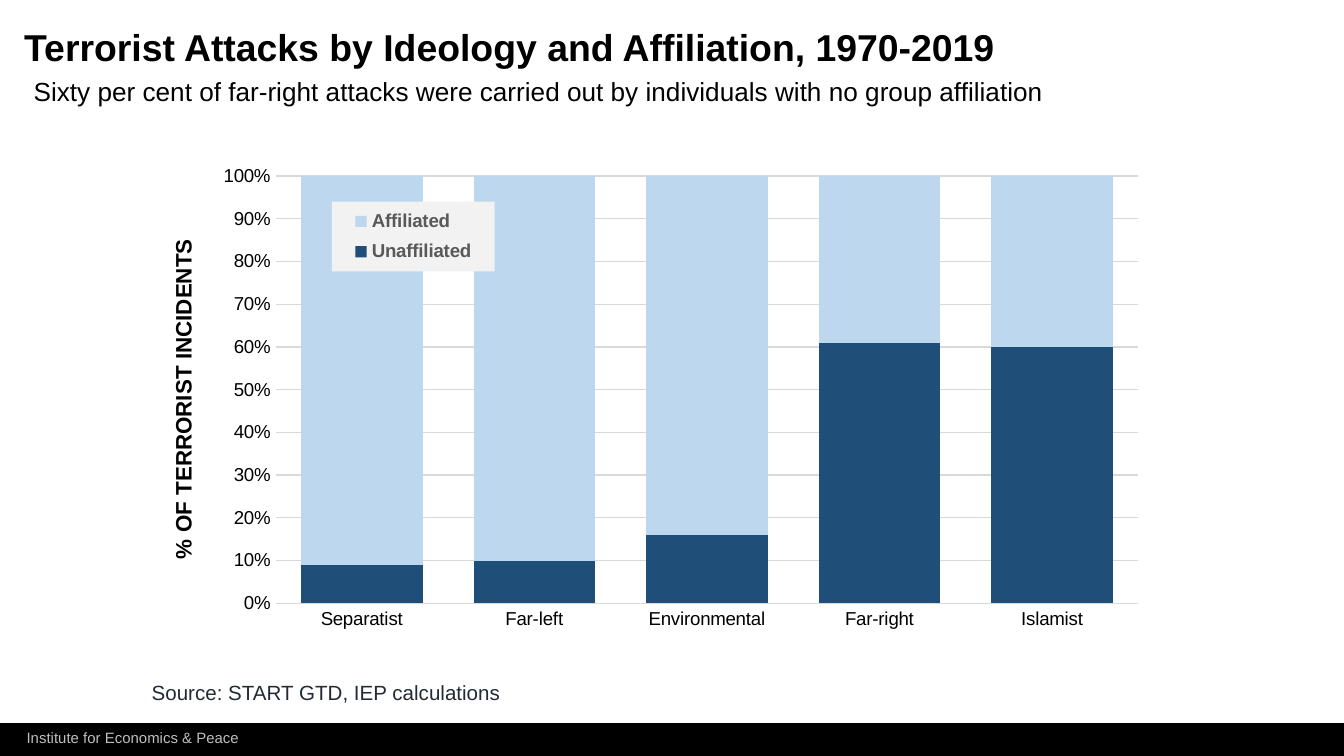
from lxml import etree
from pptx import Presentation
from pptx.chart.data import CategoryChartData
from pptx.dml.color import RGBColor
from pptx.enum.chart import XL_CHART_TYPE, XL_LEGEND_POSITION, XL_TICK_MARK
from pptx.enum.shapes import MSO_SHAPE
from pptx.enum.text import MSO_ANCHOR, PP_ALIGN
from pptx.oxml import parse_xml
from pptx.oxml.ns import nsdecls, qn
from pptx.util import Inches, Pt

STACKED = XL_CHART_TYPE.COLUMN_STACKED_100
RIGHT = XL_LEGEND_POSITION.RIGHT
NO_TICK = XL_TICK_MARK.NONE
RECT = MSO_SHAPE.RECTANGLE
TOP, MIDDLE = MSO_ANCHOR.TOP, MSO_ANCHOR.MIDDLE
LEFT = PP_ALIGN.LEFT

FONT = "Arial"
COLORS = {
    "black": "000000", "white": "FFFFFF", "navy": "1F4E79", "sky": "BDD7EE",
    "grid": "D9D9D9", "legend": "F2F2F2", "label": "595959",
    "source": "222A35", "footer": "BFBFBF",
}
GROUPS = ["Separatist", "Far-left", "Environmental", "Far-right", "Islamist"]
SERIES = [
    ("Unaffiliated", (9, 10, 16, 61, 60), "navy"),
    ("Affiliated", (91, 90, 84, 39, 40), "sky"),
]


def rgb(name):
    return RGBColor.from_string(COLORS[name])


def style(font, size, color, bold=False):
    font.name, font.size, font.bold = FONT, Pt(size), bold
    font.color.rgb = rgb(color)


def write(shape, text, size, color, insets, bold=False, anchor=TOP, wrap=True):
    frame = shape.text_frame
    frame.word_wrap = wrap
    frame.vertical_anchor = anchor
    (frame.margin_left, frame.margin_top,
     frame.margin_right, frame.margin_bottom) = map(Inches, insets)
    para = frame.paragraphs[0]
    para.text, para.alignment = text, LEFT
    style(para.font, size, color, bold)
    return para


def add_box(slide, box, fill):
    shape = slide.shapes.add_shape(RECT, *map(Inches, box))
    shape.shadow.inherit = False
    shape.fill.solid()
    shape.fill.fore_color.rgb = rgb(fill)
    shape.line.fill.background()
    return shape


def add_footer(slide, box):
    x, y, _, h = box
    add_box(slide, box, "black")
    label = slide.shapes.add_textbox(*map(Inches, (x + 0.1, y - 0.01, 1.8, h - 0.01)))
    write(label, "Institute for Economics & Peace", 8, "footer",
          (0.1, 0.05, 0.1, 0.05), wrap=False)


def add_header(slide, box):
    x, y, w, h = box
    title = slide.shapes.title
    title.left, title.top, title.width, title.height = map(Inches, (x, y, w, h / 2))
    para = write(title, "Terrorist Attacks by Ideology and Affiliation, 1970-2019",
                 20, "black", (0, 0, 0, 0), bold=True, anchor=MIDDLE)
    para.line_spacing = 0.9
    sub = slide.shapes.add_textbox(*map(Inches, (x, y + h / 2, w, h / 2)))
    write(sub, "Sixty per cent of far-right attacks were carried out by "
          "individuals with no group affiliation", 14, "black",
          (0.07, 0.04, 0.07, 0.04))


def add_source(slide, box):
    write(add_box(slide, box, "white"), "Source: START GTD, IEP calculations",
          11, "source", (0.1, 0.24, 0.1, 0))


def set_layout(part, after, box, spot, inner=False):
    """Place a chart part at a spot, in inches from the corner of the chart box."""
    for old in part.findall(qn("c:layout")):
        part.remove(old)
    layout = parse_xml(f"<c:layout {nsdecls('c')}><c:manualLayout/></c:layout>")
    vals = [("layoutTarget", "inner")] if inner else []
    vals += [("xMode", "edge"), ("yMode", "edge")]
    vals += [(tag, size / whole)
             for tag, size, whole in zip("xywh", spot, box[2:] * 2)]
    for tag, val in vals:
        etree.SubElement(layout[0], qn(f"c:{tag}")).set("val", str(val))
    prior = part.find(qn(after)) if after else None
    if prior is None:
        part.insert(0, layout)
    else:
        prior.addnext(layout)


def add_fill(part, color, before=None):
    props = parse_xml(f'<c:spPr {nsdecls("c", "a")}><a:solidFill>'
                      f'<a:srgbClr val="{COLORS[color]}"/></a:solidFill>'
                      '<a:ln><a:noFill/></a:ln></c:spPr>')
    mark = part.find(qn(before)) if before else None
    if mark is None:
        part.append(props)
    else:
        mark.addprevious(props)


def add_graph(slide, box):
    data = CategoryChartData(number_format="0")
    data.categories = GROUPS
    for name, vals, _ in SERIES:
        data.add_series(name, vals)
    chart = slide.shapes.add_chart(STACKED, *map(Inches, box), data).chart
    chart.has_title = False
    style(chart.font, 10, "black")

    # Columns
    plot = chart.plots[0]
    plot.gap_width, plot.overlap, plot.vary_by_categories = 42, 100, False
    for series, (_, _, color) in zip(plot.series, SERIES):
        series.format.fill.solid()
        series.format.fill.fore_color.rgb = rgb(color)

    # Axes
    cat, val = chart.category_axis, chart.value_axis
    for axis in (cat, val):
        axis.major_tick_mark = axis.minor_tick_mark = NO_TICK
        style(axis.tick_labels.font, 10, "black")
    val.minimum_scale, val.maximum_scale, val.major_unit = 0, 1, 0.1
    val.tick_labels.number_format = "0%"
    val.tick_labels.number_format_is_linked = False
    val.has_major_gridlines = True
    for line in (cat.format.line, val.major_gridlines.format.line):
        line.color.rgb, line.width = rgb("grid"), Pt(0.75)
    val.format.line.fill.background()
    para = val.axis_title.text_frame.paragraphs[0]
    para.text = "% OF TERRORIST INCIDENTS"
    style(para.font, 12, "black", True)
    turn = val.axis_title.text_frame._txBody.bodyPr
    turn.set("rot", "-5400000")
    turn.set("vert", "horz")
    set_layout(val.axis_title._element, "c:tx", box, (0.19, 0.63))

    # Legend
    chart.has_legend = True
    legend = chart.legend
    legend.position, legend.include_in_layout = RIGHT, False
    style(legend.font, 10, "label", True)
    set_layout(legend._element, "c:legendPos", box, (1.43, 0.38, 1.21, 0.52))
    add_fill(legend._element, "legend", "c:txPr")

    # Plot and chart backgrounds
    space = chart._chartSpace
    area = space.chart.plotArea
    set_layout(area, None, box, (1.01, 0.19, 6.42, 3.18), inner=True)
    add_fill(area, "white")
    add_fill(space, "white", "c:txPr")


def main():
    deck = Presentation()
    deck.slide_width = Inches(10)
    deck.slide_height = deck.slide_width * 9 // 16
    slide = deck.slides.add_slide(deck.slide_layouts[5])
    add_footer(slide, (0, 5.38, 10, 0.25))
    add_header(slide, (0.18, 0.22, 8.09, 0.6))
    add_source(slide, (1.03, 4.82, 8.41, 0.37))
    add_graph(slide, (1.04, 1.12, 7.6, 3.81))
    deck.save("out.pptx")


if __name__ == "__main__":
    main()
